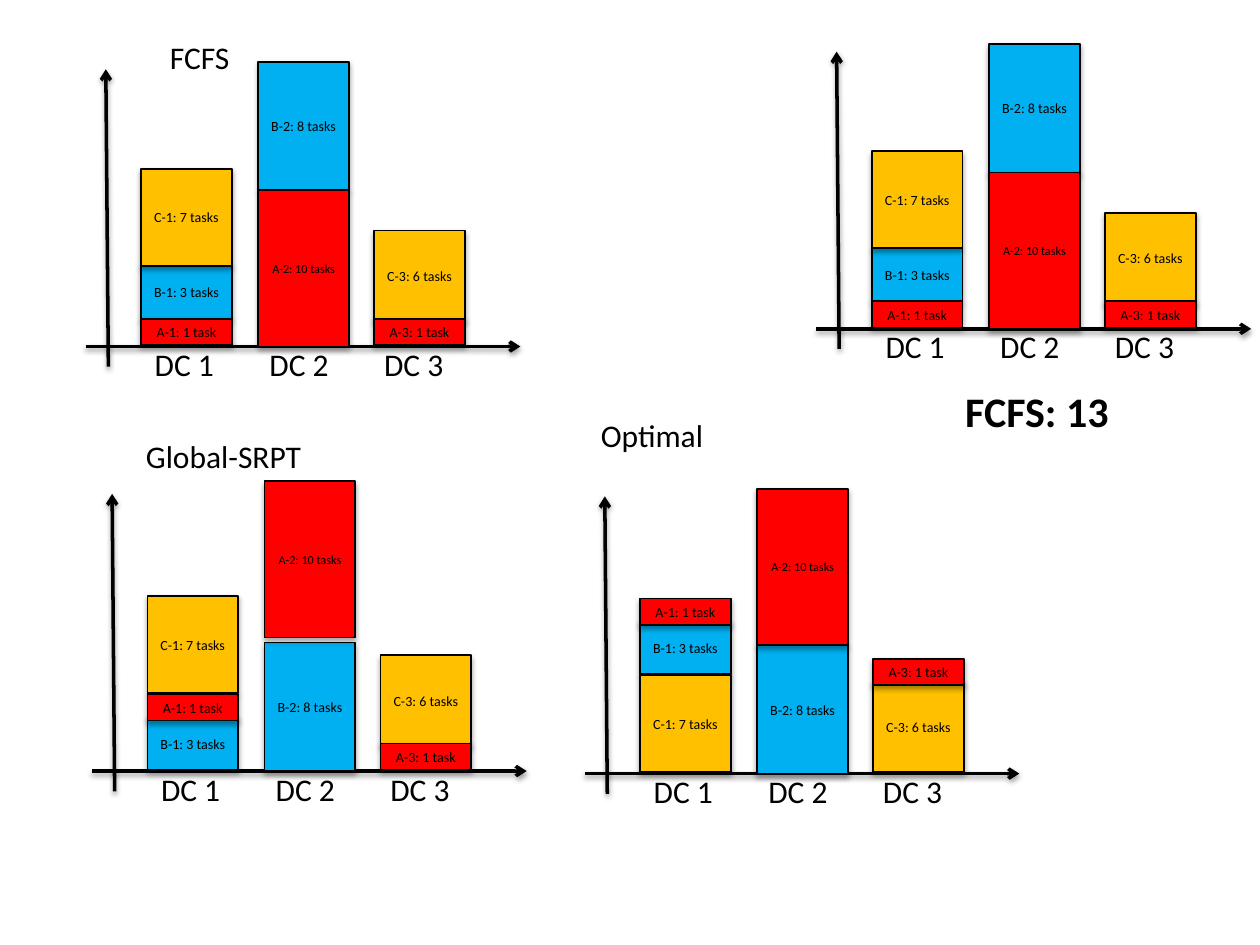
import pptx
import pptx.util
import pptx.dml.color
import pptx.enum.shapes
import pptx.enum.text
import pptx.oxml
from lxml import etree

Inches, Pt = pptx.util.Inches, pptx.util.Pt
ALIGN = pptx.enum.text.PP_ALIGN
A_NS = "http://schemas.openxmlformats.org/drawingml/2006/main"

COLORS = {"A": "FF0000", "B": "00B0F0", "C": "FFC000", "ink": "000000"}
FONT = "Calibri"
BAR_W = 0.72
BAR_X = {"1": 0.44, "2": 1.37, "3": 2.29}  # bar offset for each data centre

# Task name: (label, height, font size), in drawing order
TASKS = {
    "B-1": ("B-1: 3 tasks", 0.42, 8),
    "C-1": ("C-1: 7 tasks", 0.77, 8),
    "B-2": ("B-2: 8 tasks", 1.02, 8),
    "A-2": ("A-2: 10 tasks", 1.24, 7),
    "A-1": ("A-1: 1 task", 0.21, 8),
    "C-3": ("C-3: 6 tasks", 0.72, 8),
    "A-3": ("A-3: 1 task", 0.21, 8),
}

# Stacks from the bottom up: (task, gap below it)
FCFS = [
    [("A-1", 0.01), ("B-1", 0), ("C-1", 0)],
    [("A-2", 0), ("B-2", 0)],
    [("A-3", 0.01), ("C-3", -0.02)],
]
GLOBAL_SRPT = [
    [("B-1", 0.01), ("A-1", -0.03), ("C-1", 0.01)],
    [("B-2", 0), ("A-2", 0.04)],
    [("A-3", 0.01), ("C-3", -0.02)],
]
OPTIMAL = [
    [("C-1", 0.01), ("B-1", 0.01), ("A-1", -0.03)],
    [("B-2", 0), ("A-2", 0)],
    [("C-3", 0.01), ("A-3", -0.03)],
]


def rgb(name):
    return pptx.dml.color.RGBColor.from_string(COLORS[name])


def write_text(sp, text, size=18, bold=False, align=ALIGN.LEFT):
    tf = sp.text_frame
    tf.word_wrap = True
    p = tf.paragraphs[0]
    p.alignment = align
    r = p.add_run()
    r.text = text
    r.font.name, r.font.size, r.font.bold = FONT, Pt(size), bold
    r.font.color.rgb = rgb("ink")


def add_label(shapes, text, x, y, w, h=0.4, **fmt):
    sp = shapes.add_textbox(Inches(x), Inches(y), Inches(w), Inches(h))
    write_text(sp, text, **fmt)


def add_shadow(sp, dist, opacity):
    """Soft black shadow straight down; dist in points, opacity in percent."""
    sp._element.spPr.append(pptx.oxml.parse_xml(
        f'<a:effectLst xmlns:a="{A_NS}"><a:outerShdw blurRad="{Pt(3.1)}" '
        f'dist="{Pt(dist)}" dir="5400000" rotWithShape="0">'
        f'<a:srgbClr val="{COLORS["ink"]}"><a:alpha val="{opacity * 1000}"/>'
        '</a:srgbClr></a:outerShdw></a:effectLst>'))


def add_axis(shapes, x1, y1, x2, y2):
    line = shapes.add_connector(pptx.enum.shapes.MSO_CONNECTOR.STRAIGHT,
                                Inches(x1), Inches(y1), Inches(x2), Inches(y2))
    line.line.color.rgb = rgb("ink")
    line.line.width = Pt(2)
    etree.SubElement(line.line._get_or_add_ln(), f"{{{A_NS}}}tailEnd", type="arrow")
    add_shadow(line, 1.6, 38)


def add_task(shapes, name, x, y):
    label, height, size = TASKS[name]
    sp = shapes.add_shape(pptx.enum.shapes.MSO_SHAPE.RECTANGLE,
                          Inches(x), Inches(y), Inches(BAR_W), Inches(height))
    sp.fill.solid()
    sp.fill.fore_color.rgb = rgb(name[0])
    sp.line.color.rgb = rgb("ink")
    sp.line.width = Pt(1)
    add_shadow(sp, 1.8, 35)
    tf = sp.text_frame
    tf.margin_left = tf.margin_right = Inches(0.05)
    tf.vertical_anchor = pptx.enum.text.MSO_ANCHOR.MIDDLE
    write_text(sp, label, size=size, align=ALIGN.CENTER)


def add_schedule(slide, x, y, stacks):
    """One schedule; (x, y) is the left end of its horizontal axis."""
    shapes = slide.shapes.add_group_shape().shapes

    # Axes
    add_axis(shapes, x + 0.18, y + 0.16, x + 0.16, y - 2.2)
    add_axis(shapes, x, y, x + 3.45, y)

    # Stacked tasks
    tops = {}
    for stack in stacks:
        top = y
        for name, gap in stack:
            top -= gap + TASKS[name][1]
            tops[name] = top
    for name in TASKS:
        add_task(shapes, name, x + BAR_X[name[-1]], tops[name])

    # Data centre names
    for i in range(3):
        add_label(shapes, f"DC {i + 1}", x + 0.45 + 0.91 * i, y - 0.06, 0.74)


def main():
    prs = pptx.Presentation()
    prs.slide_width, prs.slide_height = Inches(10), Inches(7.5)
    slide = prs.slides.add_slide(prs.slide_layouts[6])

    # Schedules
    for x, y, stacks in [(0.68, 2.75, FCFS), (0.73, 6.12, GLOBAL_SRPT),
                         (4.64, 6.14, OPTIMAL), (6.48, 2.61, FCFS)]:
        add_schedule(slide, x, y, stacks)

    # Titles and result
    for text, x, y in [("FCFS", 1.25, 0.25), ("Global-SRPT", 1.06, 3.42),
                       ("Optimal", 4.67, 3.25)]:
        add_label(slide.shapes, text, x, y, 1.72)
    add_label(slide.shapes, "FCFS: 13", 6.73, 3.01, 3, 0.5,
              size=24, bold=True, align=ALIGN.CENTER)

    prs.save("out.pptx")


if __name__ == "__main__":
    main()
